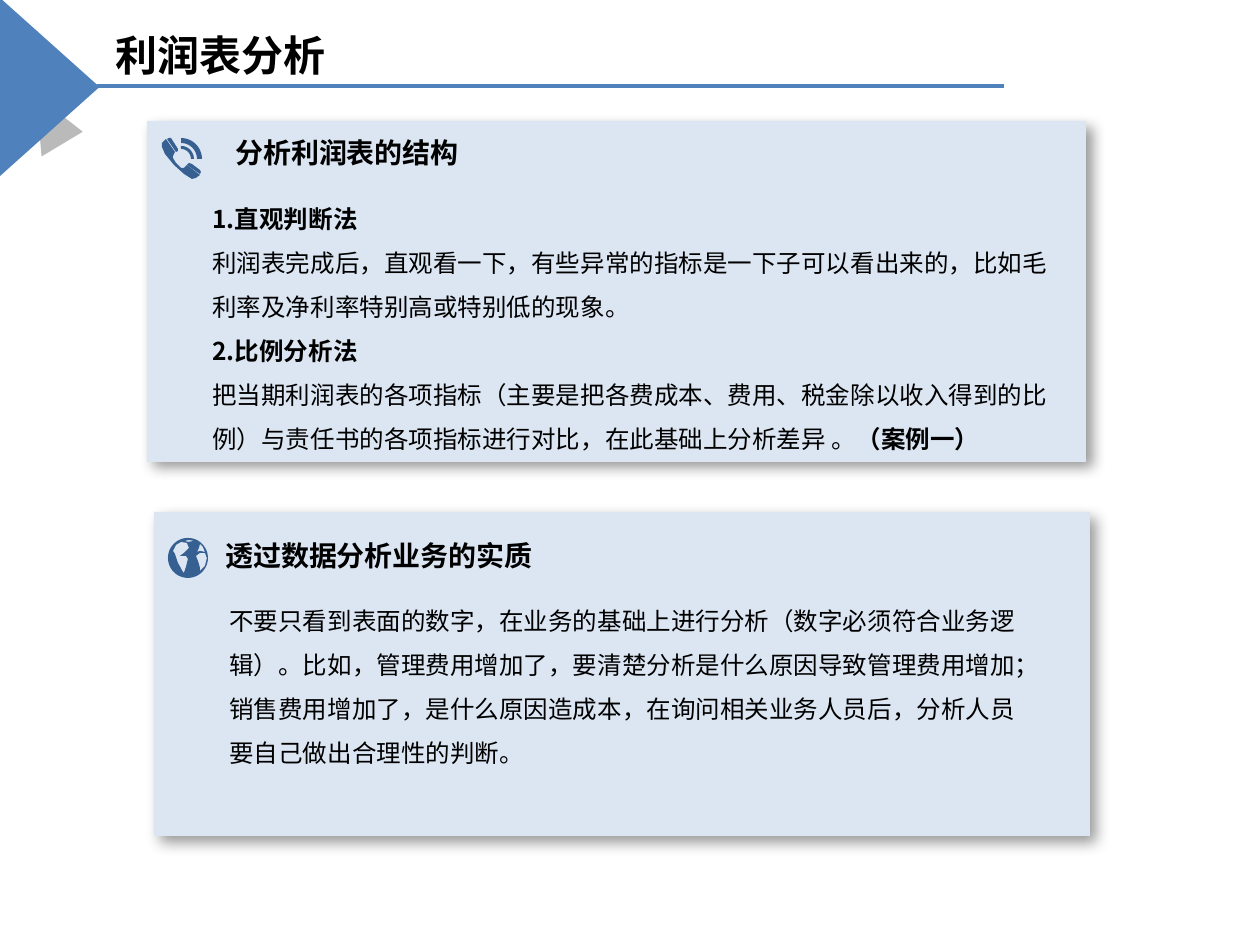
import math
import pptx
import pptx.util
import pptx.dml.color
import pptx.enum.shapes
import pptx.enum.text
import pptx.oxml
import pptx.oxml.ns

PX = 914400 / 126
THEME = {
    "font": "Noto Sans CJK SC", "ink": "000000", "accent": "4F81BD",
    "panel": "DCE6F2", "icon": "376092", "fold": "BABABA",
    "title": 24, "heading": 16, "body": 14, "spacing": 1.5, "rule": 2,
}
SHAPE = pptx.enum.shapes.MSO_SHAPE

TEXTS = [
    {"box": (107, 25, 998, 60), "size": "title", "margins": (9, 5, 9, 5),
     "paragraphs": [[("利润表分析", True)]]},
    {"box": (223, 129, 252, 77), "size": "heading", "wrap": False,
     "paragraphs": [[("分析利润表的结构", True)]]},
    {"box": (200, 183, 881, 280), "size": "body", "spacing": THEME["spacing"],
     "paragraphs": [
         [("1.直观判断法", True)],
         [("利润表完成后，直观看一下，有些异常的指标是一下子可以看出来的，比如毛利率及净利率特别高或特别低的现象。", False)],
         [("2.比例分析法", True)],
         [("把当期利润表的各项指标（主要是把各费成本、费用、税金除以收入得到的比例）与责任书的各项指标进行对比，在此基础上分析差异 。", False),
          ("（案例一）", True)],
     ]},
    {"box": (213, 532, 336, 47), "size": "heading", "wrap": False,
     "paragraphs": [[("透过数据分析业务的实质", True)]]},
    {"box": (217, 585, 833, 190), "size": "body", "spacing": THEME["spacing"],
     "paragraphs": [
         [("不要只看到表面的数字，在业务的基础上进行分析（数字必须符合业务逻辑）。比如，管理费用增加了，要清楚分析是什么原因导致管理费用增加；销售费用增加了，是什么原因造成本，在询问相关业务人员后，分析人员要自己做出合理性的判断。", False)],
     ]},
]
PANELS = [(147, 121, 939, 341), (154, 512, 936, 324)]
CORNER = [
    {"box": (24, 93, 48, 55), "rotation": 329, "apex": 0.56, "fill": "fold"},
    {"box": (-40, 37, 179, 100), "rotation": 90, "apex": 0.5, "fill": "accent"},
]
TITLE_RULE = (97, 86, 1004, 86)

HANDSET = [(166, 139), (162, 143), (162, 147), (165, 154), (174, 165), (184, 174), (192, 179), (196, 178),
           (200, 175), (187, 165), (184, 168), (181, 168), (176, 163), (173, 158), (173, 156), (175, 152)]
EARPIECE = [(167, 139), (169, 138), (171, 138), (178, 149), (178, 151), (176, 152)]
MOUTHPIECE = [(187, 165), (189, 163), (192, 164), (200, 170), (201, 172), (200, 174)]
WAVE_CENTER, WAVES = (181, 159), [(13, 10), (21, 16)]
GLOBE_CENTER, GLOBE_RADIUS = (188, 558), 20
GLOBE_GAPS = [
    [(205, 552), (200, 551), (197, 552), (199, 548), (200, 544), (203, 547)],
    [(185, 541), (189, 540), (194, 541), (188, 542)],
    [(181, 542), (187, 543), (189, 548), (185, 552), (184, 553), (180, 556), (186, 556), (188, 559),
     (186, 567), (184, 573), (183, 572), (178, 563), (176, 557), (175, 554), (173, 551), (176, 545)],
    [(200, 571), (200, 568), (199, 564), (198, 561), (196, 556), (200, 553), (205, 553), (207, 558), (205, 566)],
]


def emu(*lengths):
    return [round(n * PX) for n in lengths]


def color(name):
    return pptx.dml.color.RGBColor.from_string(THEME[name])


def paint(s, name):
    s.shadow.inherit = False
    s.fill.solid()
    s.fill.fore_color.rgb = color(name)
    s.line.fill.background()


def add_shape(kind, box, fill):
    s = slide.shapes.add_shape(kind, *emu(*box))
    paint(s, fill)
    return s


def add_panel(box):
    s = add_shape(SHAPE.RECTANGLE, box, "panel")
    effects = s._element.spPr.find(pptx.oxml.ns.qn("a:effectLst"))
    effects.append(pptx.oxml.parse_xml(
        f'<a:outerShdw {pptx.oxml.ns.nsdecls("a")} blurRad="101600" dist="63500" dir="2700000" '
        'algn="tl" rotWithShape="0"><a:srgbClr val="000000"><a:alpha val="40000"/></a:srgbClr></a:outerShdw>'))


def arc(center, radius, start, end, steps):
    angles = [math.radians(start + (end - start) * i / steps) for i in range(steps + 1)]
    return [(center[0] + radius * math.cos(a), center[1] + radius * math.sin(a)) for a in angles]


def add_outline(contours):
    first, *rest = [[emu(*point) for point in contour] for contour in contours]
    builder = slide.shapes.build_freeform(*first[0])
    builder.add_line_segments(first[1:], close=True)
    for contour in rest:
        builder.move_to(*contour[0])
        builder.add_line_segments(contour[1:], close=True)
    paint(builder.convert_to_shape(), "icon")


def add_text(item):
    s = slide.shapes.add_textbox(*emu(*item["box"]))
    tf = s.text_frame
    tf.word_wrap = item.get("wrap", True)
    tf.auto_size = pptx.enum.text.MSO_AUTO_SIZE.NONE
    sides = ("margin_left", "margin_top", "margin_right", "margin_bottom")
    for side, margin in zip(sides, emu(*item.get("margins", ()))):
        setattr(tf, side, margin)
    for i, runs in enumerate(item["paragraphs"]):
        p = tf.add_paragraph() if i else tf.paragraphs[0]
        p.line_spacing = item.get("spacing")
        for text, bold in runs:
            r = p.add_run()
            r.text = text
            r.font.color.rgb = color("ink")
            formats = {"size": pptx.util.Pt(THEME[item["size"]]), "name": THEME["font"], "bold": bold}
            for key, value in formats.items():
                setattr(r.font, key, value)
            r._r.get_or_add_rPr().append(pptx.oxml.parse_xml(
                f'<a:ea {pptx.oxml.ns.nsdecls("a")} typeface="{THEME["font"]}"/>'))


prs = pptx.Presentation()
prs.slide_width, prs.slide_height = emu(1260, 945)
slide = prs.slides.add_slide(prs.slide_layouts[6])

for part in CORNER:
    s = add_shape(SHAPE.ISOSCELES_TRIANGLE, part["box"], part["fill"])
    s.rotation = part["rotation"]
    s.adjustments[0] = part["apex"]

rule = slide.shapes.add_connector(pptx.enum.shapes.MSO_CONNECTOR.STRAIGHT, *emu(*TITLE_RULE))
rule.line.color.rgb = color("accent")
rule.line.width = pptx.util.Pt(THEME["rule"])
rule._element.spPr.append(pptx.oxml.parse_xml(f'<a:effectLst {pptx.oxml.ns.nsdecls("a")}/>'))

for box in PANELS:
    add_panel(box)

for outer, inner in WAVES:
    add_outline([arc(WAVE_CENTER, outer, -90, 0, 12) + arc(WAVE_CENTER, inner, 0, -90, 12)])
for part in (HANDSET, EARPIECE, MOUTHPIECE):
    add_outline([part])
add_outline([arc(GLOBE_CENTER, GLOBE_RADIUS, 0, 360, 48)] + GLOBE_GAPS)

for item in TEXTS:
    add_text(item)

prs.save("out.pptx")
